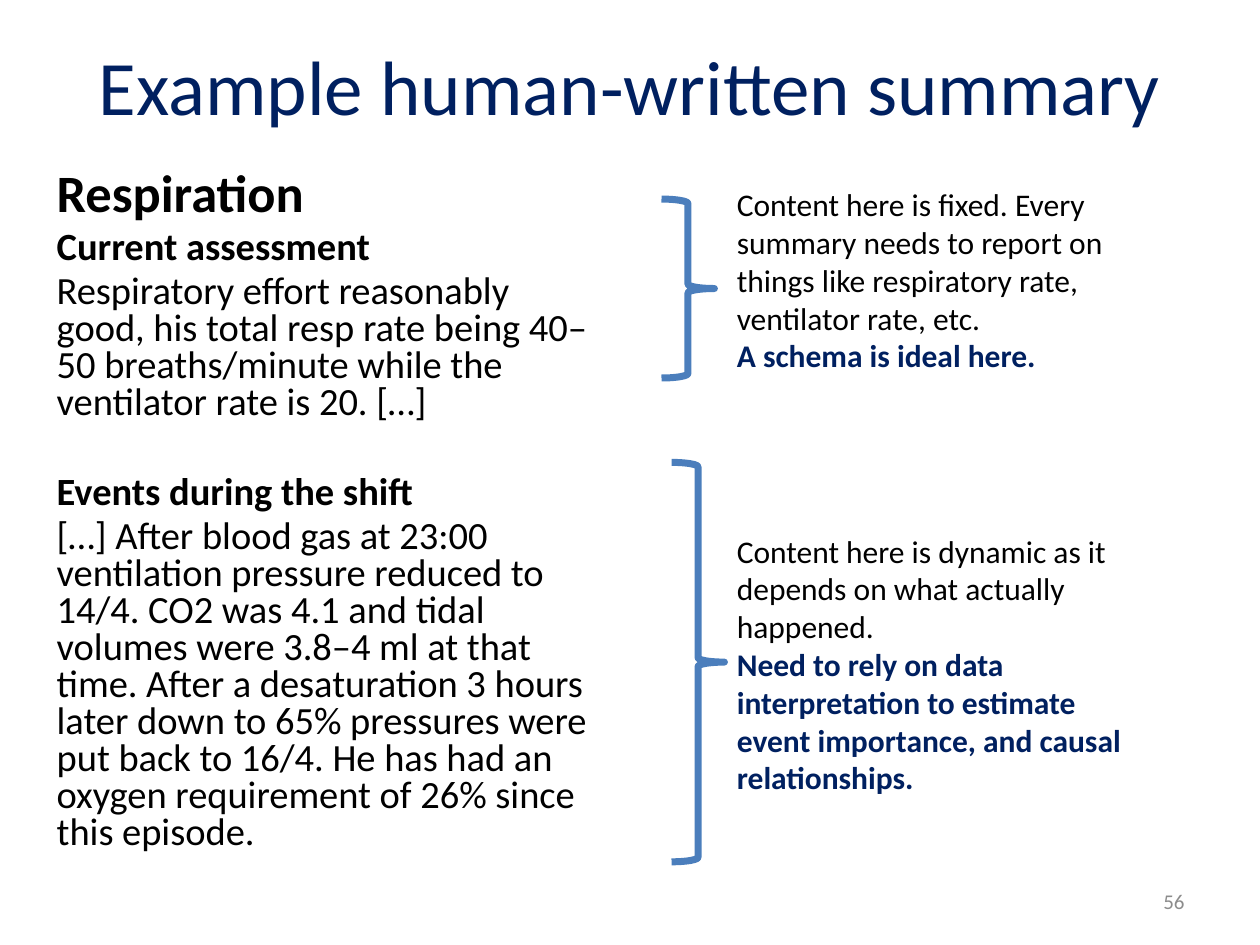
from dataclasses import dataclass

from lxml.etree import SubElement
from pptx import Presentation
from pptx.dml.color import RGBColor
from pptx.enum.shapes import MSO_SHAPE
from pptx.enum.text import MSO_ANCHOR, MSO_AUTO_SIZE, PP_ALIGN
from pptx.oxml.ns import qn
from pptx.util import Inches, Pt

FONT = "Calibri"
NAVY = "002060"
BLACK = "000000"
GRAY = "8C8C8C"
BLUE = "4B7EBC"


@dataclass
class Box:
    left: float
    top: float
    width: float
    height: float

    def lengths(self) -> list:
        return [Inches(value) for value in (self.left, self.top, self.width, self.height)]


@dataclass
class Line:
    text: str
    size: int
    color: str = BLACK
    bold: bool = False
    space_before: float = 0


@dataclass
class Note:
    brace: Box
    box: Box
    content: str
    advice: str


SUMMARY = [
    Line("Respiration", 30, bold=True, space_before=6),
    Line("Current assessment", 22, bold=True, space_before=4.4),
    Line("Respiratory effort reasonably good, his total resp rate being 40–50 "
         "breaths/minute while the ventilator rate is 20. […]", 22, space_before=4.4),
    Line("Events during the shift", 22, bold=True, space_before=30),
    Line("[…] After blood gas at 23:00 ventilation pressure reduced to 14/4. CO2 was 4.1 "
         "and tidal volumes were 3.8–4 ml at that time. After a desaturation 3 hours later "
         "down to 65% pressures were put back to 16/4. He has had an oxygen requirement of "
         "26% since this episode.", 22, space_before=4.4),
]

NOTES = [
    Note(Box(5.25, 1.58, 0.42, 1.42), Box(5.75, 1.42, 3.5, 1.62),
         "Content here is fixed. Every summary needs to report on things like "
         "respiratory rate, ventilator rate, etc.",
         "A schema is ideal here."),
    Note(Box(5.33, 3.67, 0.42, 3.17), Box(5.75, 4.17, 3.5, 2.22),
         "Content here is dynamic as it depends on what actually happened.",
         "Need to rely on data interpretation to estimate event importance, "
         "and causal relationships."),
]


def rgb(color: str) -> RGBColor:
    return RGBColor.from_string(color)


def write_lines(frame, lines: list[Line], alignment=PP_ALIGN.LEFT) -> None:
    frame.word_wrap = True
    frame.text = "\n".join(line.text for line in lines)
    for para, line in zip(frame.paragraphs, lines):
        para.alignment = alignment
        para.space_before = Pt(line.space_before)
        for span in para.runs:
            span.font.name = FONT
            span.font.size = Pt(line.size)
            span.font.bold = line.bold
            span.font.color.rgb = rgb(line.color)


def place(shape, box: Box) -> None:
    shape.left, shape.top, shape.width, shape.height = box.lengths()


def add_title(page, text: str) -> None:
    title = page.shapes.title
    place(title, Box(0.5, 0.05, 9, 1.25))
    write_lines(title.text_frame, [Line(text, 44, NAVY)], PP_ALIGN.CENTER)
    title.text_frame.vertical_anchor = MSO_ANCHOR.MIDDLE


def add_summary(page, lines: list[Line]) -> None:
    body = page.placeholders[1]
    place(body, Box(0.35, 1.32, 4.42, 5.85))
    write_lines(body.text_frame, lines)
    body.text_frame.auto_size = MSO_AUTO_SIZE.NONE
    for para in body.text_frame.paragraphs:
        para.line_spacing = 0.8
        properties = para._p.get_or_add_pPr()
        properties.set("marL", "0")
        properties.set("indent", "0")
        SubElement(properties, qn("a:buNone"))


def add_text(page, box: Box, lines: list[Line], alignment=PP_ALIGN.LEFT):
    shape = page.shapes.add_textbox(*box.lengths())
    write_lines(shape.text_frame, lines, alignment)
    return shape


def add_note(page, note: Note) -> None:
    brace = page.shapes.add_shape(MSO_SHAPE.RIGHT_BRACE, *note.brace.lengths())
    brace.shadow.inherit = False
    brace.fill.background()
    brace.line.color.rgb = rgb(BLUE)
    brace.line.width = Pt(4)
    text = add_text(page, note.box,
                    [Line(note.content, 18), Line(note.advice, 18, NAVY, bold=True)])
    text.text_frame.auto_size = MSO_AUTO_SIZE.SHAPE_TO_FIT_TEXT


def main() -> None:
    deck = Presentation()
    deck.slide_width = Inches(10)
    deck.slide_height = Inches(7.5)
    page = deck.slides.add_slide(deck.slide_layouts[1])
    add_title(page, "Example human-written summary")
    add_summary(page, SUMMARY)
    for note in NOTES:
        add_note(page, note)
    number = add_text(page, Box(7.17, 6.95, 2.33, 0.4), [Line("56", 12, GRAY)], PP_ALIGN.RIGHT)
    number.text_frame.vertical_anchor = MSO_ANCHOR.MIDDLE
    deck.save("out.pptx")


if __name__ == "__main__":
    main()
